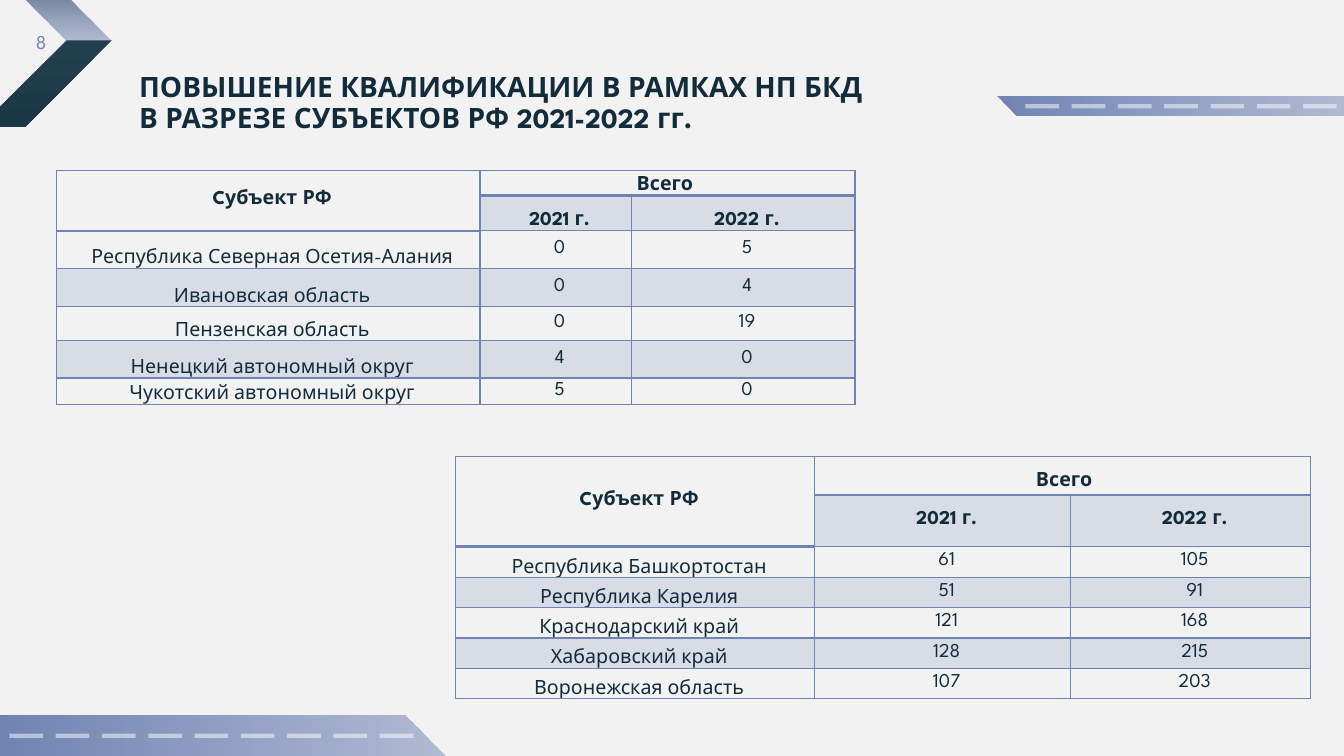
from lxml import etree
from pptx import Presentation
from pptx import util as u
from pptx.dml import color as dml_color
from pptx.enum import dml, shapes, text
from pptx.oxml import ns

BLUE, INK, WHITE, PAPER = "7084B4", "122C3B", "FFFFFF", "F2F2F2"
FONT = "League Spartan"
CENTER = text.PP_ALIGN.CENTER
TOP, MIDDLE, BOTTOM = (text.MSO_ANCHOR.TOP, text.MSO_ANCHOR.MIDDLE,
                       text.MSO_ANCHOR.BOTTOM)


def paint(target, value):
    target.rgb = dml_color.RGBColor.from_string(value)


def fade(element, percent):
    last = list(element.iter(ns.qn("a:srgbClr")))[-1]
    etree.SubElement(last, ns.qn("a:alpha")).set("val", str(percent * 1000))


def apply(target, values):
    for name, value in values.items():
        setattr(target, name, value)


def inches(*lengths):
    return [u.Inches(length) for length in lengths]


def write(para, words, values, size=14, bold=False, color=INK):
    apply(para, values)
    span = para.add_run()
    span.text = words
    apply(span.font, {"name": FONT, "size": u.Pt(size), "bold": bold})
    paint(span.font.color, color)


def shade(shape, start, end, angle, opacity=100):
    shape.shadow.inherit = False
    shape.line.fill.background()
    shape.fill.gradient()
    shape.fill.gradient_angle = angle
    for stop, value in zip(shape.fill.gradient_stops, (start, end)):
        paint(stop.color, value)
    if opacity < 100:
        fade(shape.element.spPr, opacity)


def add_chevron(page, left, top, width, height):
    halves = [(top, "1", BLUE, 50), (top + height / 2, "0", "1A3746", 100)]
    for half_top, flip, end, opacity in halves:
        half = page.shapes.add_shape(
            shapes.MSO_SHAPE.PARALLELOGRAM,
            *inches(left, half_top, width, height / 2))
        half.adjustments[0] = 1
        half.element.spPr.xfrm.set("flipH", flip)
        shade(half, "23404E", end, 270, opacity)


def add_road(page, left, top, width, height, slant_left, dash_ends):
    right, bottom = left + width, top + height
    if slant_left:
        corners = [(left, top), (right, top), (right, bottom),
                   (left + height, bottom)]
    else:
        corners = [(left, top), (right - height, top), (right, bottom),
                   (left, bottom)]
    points = [inches(*corner) for corner in corners]
    outline = page.shapes.build_freeform(*points[0])
    outline.add_line_segments(points[1:], close=True)
    shade(outline.convert_to_shape(), BLUE, BLUE, 0, 50)

    middle = top + height / 2
    begin, end = dash_ends
    marking = page.shapes.add_connector(
        shapes.MSO_CONNECTOR.STRAIGHT, *inches(begin, middle, end, middle))
    paint(marking.line.color, WHITE)
    apply(marking.line, {"width": u.Pt(3),
                         "dash_style": dml.MSO_LINE.LONG_DASH})
    fade(marking.element.spPr, 50)
    etree.SubElement(marking.element.spPr, ns.qn("a:effectLst"))


def add_title(page, left, top, width, height, lines):
    title = page.shapes.title
    apply(title, dict(zip(("left", "top", "width", "height"),
                          inches(left, top, width, height))))
    apply(title.text_frame, {
        "word_wrap": True, "vertical_anchor": TOP,
        "auto_size": text.MSO_AUTO_SIZE.NONE,
        "margin_top": u.Inches(0.37), "margin_bottom": 0})
    para = title.text_frame.paragraphs[0]
    layout = {"alignment": text.PP_ALIGN.LEFT, "line_spacing": 0.9}
    for index, line in enumerate(lines):
        if index:
            para.add_line_break()
        write(para, line, layout, size=20, bold=True)


def add_number(page, left, top, width, height, number):
    box = page.shapes.add_textbox(*inches(left, top, width, height))
    apply(box.text_frame, {"word_wrap": True, "vertical_anchor": MIDDLE})
    write(box.text_frame.paragraphs[0], number,
          {"alignment": text.PP_ALIGN.RIGHT}, color=BLUE)


def draw_borders(cell, bottom_width):
    properties = cell._tc.get_or_add_tcPr()
    for side, width in (("L", 1), ("R", 1), ("T", 1), ("B", bottom_width)):
        line = etree.SubElement(properties, ns.qn(f"a:ln{side}"))
        line.set("w", str(u.Pt(width)))
        solid = etree.SubElement(line, ns.qn("a:solidFill"))
        etree.SubElement(solid, ns.qn("a:srgbClr")).set("val", BLUE)


def fill_cell(cell, words, anchor, top_gap, indent, bold):
    apply(cell, {"vertical_anchor": anchor,
                 "margin_left": u.Inches(0.07), "margin_right": u.Inches(0.07),
                 "margin_top": u.Inches(top_gap), "margin_bottom": 0})
    para = cell.text_frame.paragraphs[0]
    write(para, words, {"alignment": CENTER, "line_spacing": u.Pt(12)},
          bold=bold)
    para._p.get_or_add_pPr().set("marL", str(u.Inches(indent)))


def add_region_table(page, left, top, widths, heights, regions,
                     total_gap, total_indent):
    rows = [("Cубъект РФ", "Всего ", ""), ("", "2021 г.", "2022 г."), *regions]
    frame = page.shapes.add_table(
        len(rows), len(widths),
        *inches(left, top, sum(widths), sum(heights)))
    table = frame.table
    apply(table, {"first_row": False, "horz_banding": False})
    for column, width in zip(table.columns, widths):
        column.width = u.Inches(width)
    for row, height in zip(table.rows, heights):
        row.height = u.Inches(height)
    table.cell(0, 0).merge(table.cell(1, 0))
    table.cell(0, 1).merge(table.cell(0, 2))

    for r, row in enumerate(rows):
        for c, words in enumerate(row):
            cell = table.cell(r, c)
            draw_borders(cell, 2 if r == 0 or (r, c) == (1, 0) else 1)
            if r % 2 and (r, c) != (1, 0):
                cell.fill.solid()
                paint(cell.fill.fore_color, BLUE)
                fade(cell._tc.tcPr, 20)
            else:
                cell.fill.background()
            if not words:
                continue
            anchor, gap, indent = MIDDLE, 0, 0.08
            if r < 2 and c:
                anchor, gap = TOP, 0.17
            elif r >= 2 and c == 0:
                anchor = BOTTOM
            if (r, c) == (0, 1):
                gap, indent = total_gap, total_indent
            fill_cell(cell, words, anchor, gap, indent, bold=r < 2)


def build_page(deck):
    page = deck.slides.add_slide(deck.slide_layouts[5])
    page.background.fill.solid()
    paint(page.background.fill.fore_color, PAPER)
    add_chevron(page, -0.2, -0.46, 1.31, 1.72)
    add_road(page, 9.89, 0.96, 3.44, 0.19, True, (10.17, 13.33))
    add_road(page, 0, 7.1, 4.42, 0.4, False, (4.1, 0))
    add_title(page, 1.28, 0.36, 9.92, 0.97, [
        "ПОВЫШЕНИЕ КВАЛИФИКАЦИИ В РАМКАХ НП БКД ",
        "В РАЗРЕЗЕ СУБЪЕКТОВ РФ 2021-2022 гг."])
    add_number(page, -0.09, 0.21, 0.65, 0.4, "8")
    add_region_table(
        page, 0.56, 1.69, [4.2, 1.5, 2.22],
        [0.25, 0.35, 0.37, 0.38, 0.34, 0.37, 0.26],
        [("Республика Северная Осетия-Алания", "0", "5"),
         ("Ивановская область", "0", "4"),
         ("Пензенская область", "0", "19"),
         ("Ненецкий автономный округ", "4", "0"),
         ("Чукотский автономный округ", "5", "0")], 0.08, 0)
    add_region_table(
        page, 4.52, 4.53, [3.56, 2.54, 2.38], [0.38, 0.51, 0.31] + [0.3] * 4,
        [("Республика Башкортостан", "61", "105"),
         ("Республика Карелия", "51", "91"),
         ("Краснодарский край", "121", "168"),
         ("Хабаровский край", "128", "215"),
         ("Воронежская область", "107", "203")], 0.17, 0.08)


def main():
    deck = Presentation()
    apply(deck, {"slide_width": u.Inches(13.33), "slide_height": u.Inches(7.5)})
    build_page(deck)
    deck.save("out.pptx")


if __name__ == "__main__":
    main()
